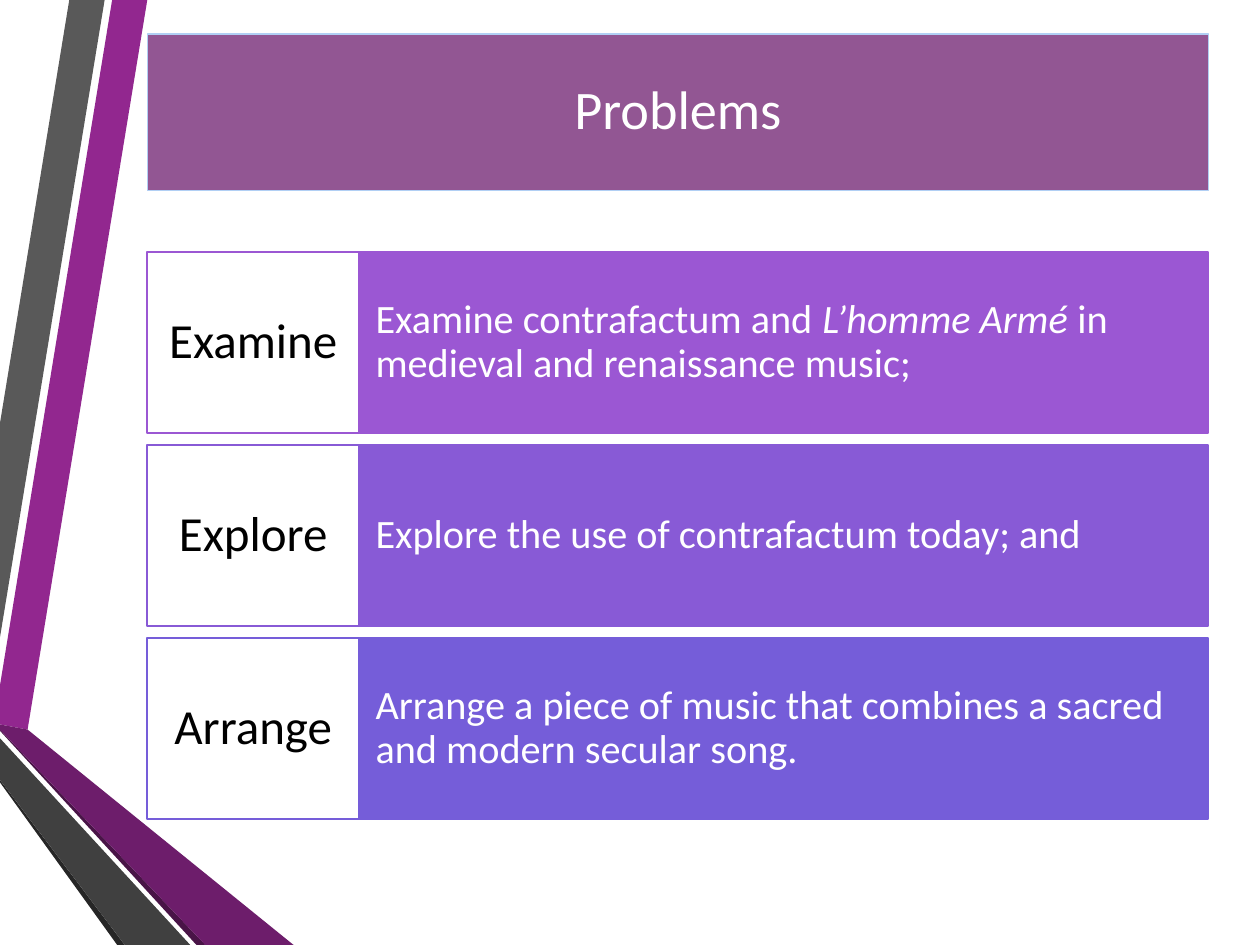
import pptx
import pptx.util
import pptx.dml.color
import pptx.enum.shapes
import pptx.enum.text

Pt = pptx.util.Pt
RGB = pptx.dml.color.RGBColor
ALIGN = pptx.enum.text.PP_ALIGN
MIDDLE = pptx.enum.text.MSO_ANCHOR.MIDDLE
RECT = pptx.enum.shapes.MSO_SHAPE.RECTANGLE

WHITE = RGB(0xFF, 0xFF, 0xFF)
BLACK = RGB(0x00, 0x00, 0x00)
MAUVE = RGB(0x92, 0x56, 0x93)
PALE = RGB(0xB1, 0xCF, 0xF4)
PURPLE = RGB(0x92, 0x27, 0x8F)
PLUM = RGB(0x6D, 0x1D, 0x6B)
DARK_PLUM = RGB(0x49, 0x14, 0x47)
GRAY = RGB(0x59, 0x59, 0x59)
DARK_GRAY = RGB(0x40, 0x40, 0x40)
COAL = RGB(0x26, 0x26, 0x26)
ORCHID = RGB(0x9B, 0x57, 0xD3)
VIOLET = RGB(0x88, 0x5A, 0xD6)
INDIGO = RGB(0x75, 0x5D, 0xD9)


def write(frame, runs, size, color, align, pad_x, pad_y):
    """Fill a frame with one paragraph made of (text, italic) runs."""
    frame.word_wrap = True
    frame.vertical_anchor = MIDDLE
    frame.margin_left = frame.margin_right = Pt(pad_x)
    frame.margin_top = frame.margin_bottom = Pt(pad_y)
    para = frame.paragraphs[0]
    para.alignment = align
    para.line_spacing = 0.9
    for text, italic in runs:
        run = para.add_run()
        run.text = text
        run.font.name = "Calibri"
        run.font.size = Pt(size)
        run.font.italic = italic
        run.font.color.rgb = color


def add_box(left, top, width, height, fill, line):
    box = slide.shapes.add_shape(RECT, Pt(left), Pt(top), Pt(width), Pt(height))
    box.shadow.inherit = False
    box.fill.solid()
    box.fill.fore_color.rgb = fill
    box.line.color.rgb = line
    box.line.width = Pt(1.25)
    return box


deck = pptx.Presentation()
deck.slide_width = Pt(720)
deck.slide_height = Pt(540)
slide = deck.slides.add_slide(deck.slide_layouts[5])

# Folded ribbons along the left edge
ribbons = [
    (PURPLE, [(0, 391.7), (0, 414), (15.8, 416.9), (84.2, 0), (64.1, 0)]),
    (GRAY, [(59.8, 0), (39.6, 0), (0, 241.9), (0, 364.3)]),
    (COAL, [(0, 445.7), (0, 447.1), (67, 540), (71.3, 540)]),
    (DARK_PLUM, [(0, 416.9), (0, 417.6), (112.3, 540), (117.4, 540)]),
    (PLUM, [(0, 416.9), (117.4, 540), (167.8, 540), (15.8, 416.9), (0, 414)]),
    (DARK_GRAY, [(0, 445.7), (71.3, 540), (108.7, 540), (0, 421.9)]),
]
for color, points in ribbons:
    first, *rest = [(Pt(x), Pt(y)) for x, y in points]
    pen = slide.shapes.build_freeform(*first)
    pen.add_line_segments(rest, close=True)
    band = pen.convert_to_shape()
    band.shadow.inherit = False
    band.fill.solid()
    band.fill.fore_color.rgb = color
    band.line.fill.background()

LEFT = 84.2
WIDTH = 606.3

title = slide.shapes.title
title.left, title.top = Pt(LEFT), Pt(19.5)
title.width, title.height = Pt(WIDTH), Pt(89.3)
title.fill.solid()
title.fill.fore_color.rgb = MAUVE
title.line.color.rgb = PALE
title.line.width = Pt(0.75)
write(title.text_frame, [("Problems", False)], 31, WHITE, ALIGN.CENTER, 7.2, 3.6)

# One row per problem: label on the left, statement on the right
TOP = 144
STEP = 110.2
HIGH = 103.7
LABEL = 121
rows = [
    ("Examine", ORCHID, [("Examine contrafactum and ", False),
                         ("L’homme Armé ", True),
                         ("in medieval and renaissance music;", False)]),
    ("Explore", VIOLET, [("Explore the use of contrafactum today; and", False)]),
    ("Arrange", INDIGO, [("Arrange a piece of music that combines a sacred "
                          "and modern secular song.", False)]),
]
for i, (name, color, runs) in enumerate(rows):
    top = TOP + i * STEP
    body = add_box(LEFT + LABEL, top, WIDTH - LABEL, HIGH, color, color)
    write(body.text_frame, runs, 23, WHITE, ALIGN.LEFT, 9.4, 26.6)
    label = add_box(LEFT, top, LABEL, HIGH, WHITE, color)
    write(label.text_frame, [(name, False)], 28, BLACK, ALIGN.CENTER, 6.5, 10)

deck.save("out.pptx")
